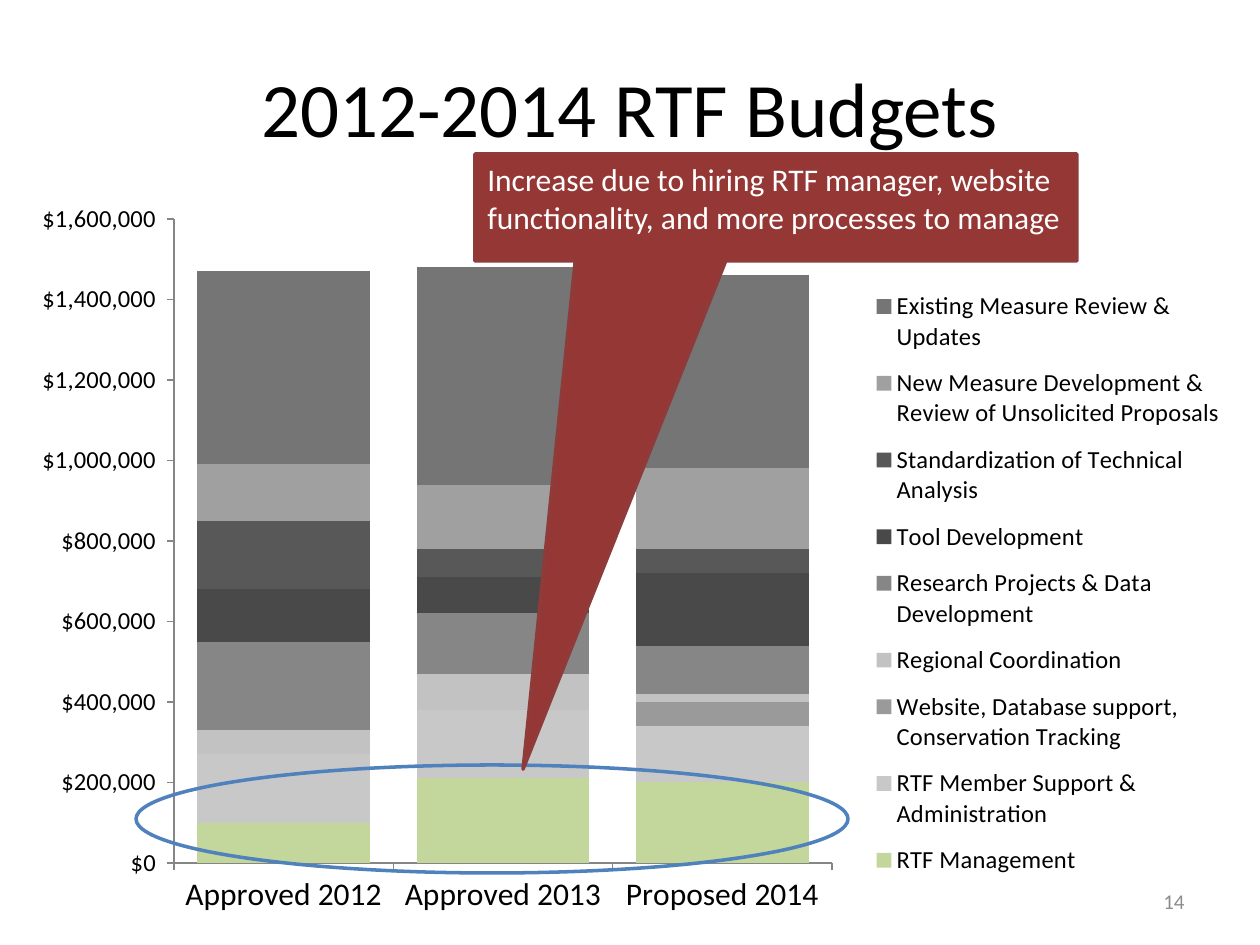
from pptx import Presentation
from pptx.chart.data import CategoryChartData
from pptx.dml.color import RGBColor
from pptx.enum.chart import XL_CHART_TYPE, XL_LEGEND_POSITION, XL_TICK_MARK
from pptx.enum.shapes import MSO_SHAPE
from pptx.enum.text import MSO_ANCHOR, PP_ALIGN
from pptx.oxml import parse_xml
from pptx.oxml.ns import nsdecls, qn
from pptx.util import Emu, Pt

FONT = "Calibri"
COLORS = {
    "text": "000000",
    "white": "FFFFFF",
    "axis": "868686",
    "number": "8C8C8C",
    "ellipse": "4F81BD",
    "callout": "953735",
    "callout_line": "8E3B39",
}
CATEGORIES = ["Approved 2012", "Approved 2013", "Proposed 2014"]
BUDGETS = [
    ("RTF Management", "C3D69B", (100000, 210000, 200000)),
    ("RTF Member Support & Administration", "C8C8C8", (170000, 170000, 140000)),
    ("Website, Database support, Conservation Tracking", "9A9A9A", (0, 0, 60000)),
    ("Regional Coordination", "C2C2C2", (60000, 90000, 20000)),
    ("Research Projects & Data Development", "868686", (220000, 150000, 120000)),
    ("Tool Development", "494949", (130000, 90000, 180000)),
    ("Standardization of Technical Analysis", "585858", (170000, 70000, 60000)),
    ("New Measure Development & Review of Unsolicited Proposals", "A0A0A0",
     (140000, 160000, 200000)),
    ("Existing Measure Review & Updates", "757575", (480000, 540000, 480000)),
]


def px(length):
    return Emu(round(length * 914400 / 126))


def to_emu(box):
    return [px(length) for length in box]


def color(name):
    return RGBColor.from_string(COLORS[name])


def apply_format(target, values):
    for name, value in values.items():
        setattr(target, name, value)


def format_font(font, size, color_name="text"):
    apply_format(font, {"name": FONT, "size": Pt(size)})
    font.color.rgb = color(color_name)


def format_line(line, color_name, width):
    line.color.rgb = color(color_name)
    line.width = Pt(width)


def write_text(shape, text, size, color_name, alignment, anchor):
    frame = shape.text_frame
    apply_format(frame, {"word_wrap": True, "vertical_anchor": anchor})
    paragraph = frame.paragraphs[0]
    paragraph.alignment = alignment
    run = paragraph.add_run()
    run.text = text
    format_font(run.font, size, color_name)


def add_label(slide, box, *text_format):
    shape = slide.shapes.add_textbox(*to_emu(box))
    write_text(shape, *text_format)


def set_layout(element, index, frame, box, inner=False):
    for layout in element.findall(qn("c:layout")):
        element.remove(layout)
    left, top, width, height = frame
    fractions = {
        "x": (box[0] - left) / width,
        "y": (box[1] - top) / height,
        "w": box[2] / width,
        "h": box[3] / height,
    }
    target = '<c:layoutTarget val="inner"/>' if inner else ""
    modes = "".join(f'<c:{side}Mode val="edge"/>' for side in "xy")
    sizes = "".join(f'<c:{side} val="{value:.4f}"/>' for side, value in fractions.items())
    element.insert(index, parse_xml(
        f'<c:layout {nsdecls("c")}><c:manualLayout>{target}{modes}{sizes}'
        '</c:manualLayout></c:layout>'))


def format_axis(axis, size):
    apply_format(axis, {
        "has_major_gridlines": False,
        "major_tick_mark": XL_TICK_MARK.OUTSIDE,
        "minor_tick_mark": XL_TICK_MARK.NONE,
    })
    format_line(axis.format.line, "axis", 0.75)
    format_font(axis.tick_labels.font, size)


def add_budget_chart(slide, box):
    chart_data = CategoryChartData()
    chart_data.categories = CATEGORIES
    for name, _, values in BUDGETS:
        chart_data.add_series(name, values)
    chart = slide.shapes.add_chart(
        XL_CHART_TYPE.COLUMN_STACKED, *to_emu(box), chart_data).chart
    apply_format(chart, {"has_title": False, "has_legend": True})
    format_font(chart.font, 18)

    plot = chart.plots[0]
    apply_format(plot, {"gap_width": 27, "overlap": 100, "vary_by_categories": False})
    for series, (_, fill_color, _) in zip(plot.series, BUDGETS):
        series.format.fill.solid()
        series.format.fill.fore_color.rgb = RGBColor.from_string(fill_color)

    format_axis(chart.category_axis, 18)
    format_axis(chart.value_axis, 14)
    apply_format(chart.value_axis, {
        "minimum_scale": 0, "maximum_scale": 1600000, "major_unit": 200000})
    apply_format(chart.value_axis.tick_labels, {
        "number_format": '"$"#,##0_);\\("$"#,##0\\)', "number_format_is_linked": False})

    legend = chart.legend
    apply_format(legend, {
        "position": XL_LEGEND_POSITION.RIGHT, "include_in_layout": False})
    format_font(legend.font, 14)

    left, top, width, height = box
    plot_area = chart._chartSpace.chart.plotArea
    set_layout(plot_area, 0, box, (left + 174, top + 65, 658, 644), inner=True)
    set_layout(legend._element, 1, box, (left + 868, top + 121, 360, 617))


def add_highlight(slide, box):
    ellipse = slide.shapes.add_shape(MSO_SHAPE.OVAL, *to_emu(box))
    ellipse.shadow.inherit = False
    ellipse.fill.background()
    format_line(ellipse.line, "ellipse", 2)


def add_callout(slide, box, text):
    callout = slide.shapes.add_shape(MSO_SHAPE.RECTANGULAR_CALLOUT, *to_emu(box))
    callout.shadow.inherit = False
    callout.adjustments[0] = -0.42
    callout.adjustments[1] = 5.25
    callout.fill.solid()
    callout.fill.fore_color.rgb = color("callout")
    format_line(callout.line, "callout_line", 2)
    write_text(callout, text, 18, "white", PP_ALIGN.LEFT, MSO_ANCHOR.TOP)


def main():
    presentation = Presentation()
    apply_format(presentation, {"slide_width": px(1260), "slide_height": px(945)})
    slide = presentation.slides.add_slide(presentation.slide_layouts[6])
    add_budget_chart(slide, (0, 154, 1260, 791))
    add_label(slide, (63, 28, 1134, 157), "2012-2014 RTF Budgets",
              44, "text", PP_ALIGN.CENTER, MSO_ANCHOR.MIDDLE)
    add_highlight(slide, (136, 765, 712, 108))
    add_callout(slide, (475, 154, 602, 107),
                "Increase due to hiring RTF manager, website functionality, "
                "and more processes to manage")
    add_label(slide, (903, 876, 294, 50), "14",
              12, "number", PP_ALIGN.RIGHT, MSO_ANCHOR.MIDDLE)
    presentation.save("out.pptx")


if __name__ == "__main__":
    main()
